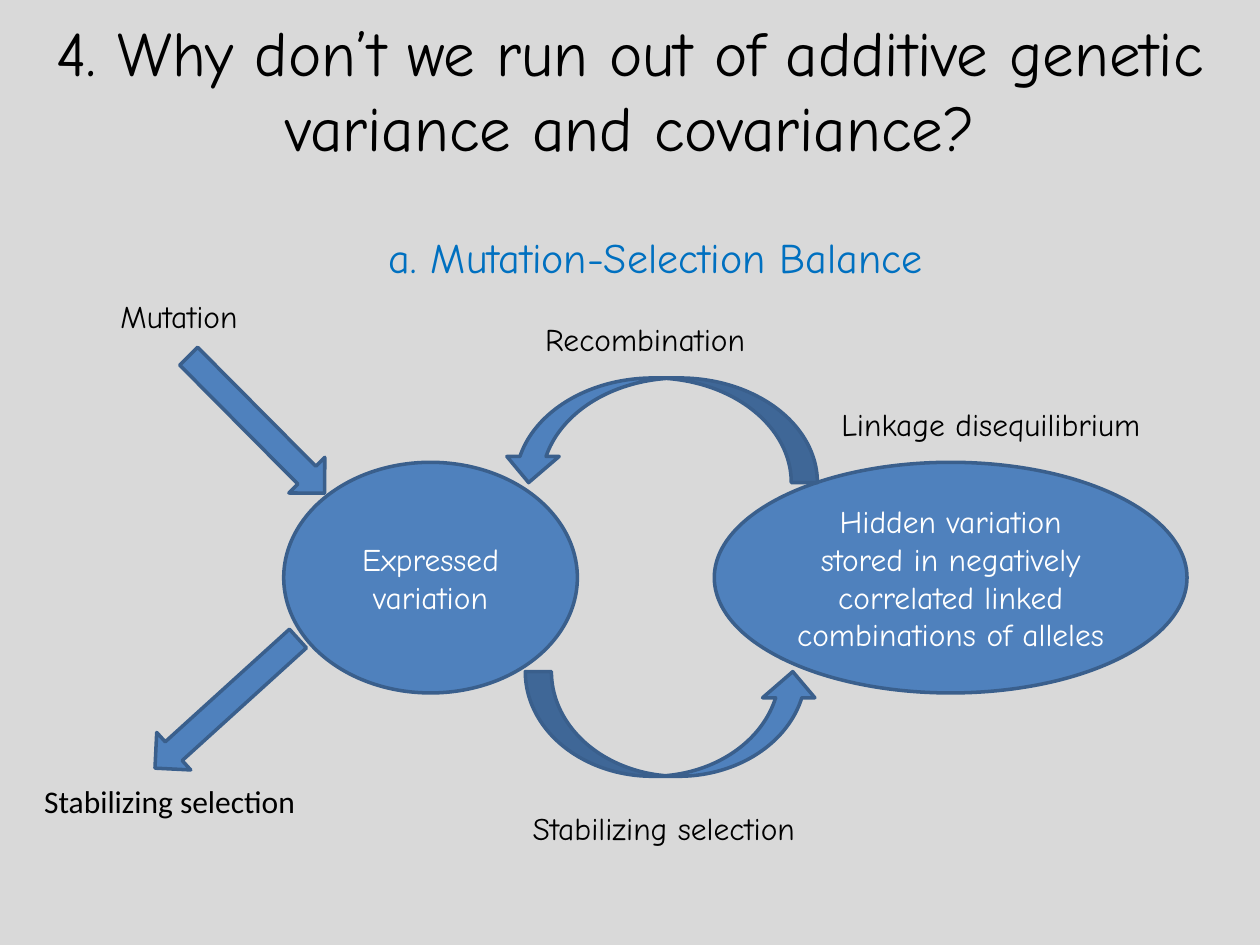
from dataclasses import dataclass

import pptx
import pptx.dml.color
import pptx.enum.shapes
import pptx.enum.text
import pptx.oxml.ns
import pptx.util

Cm = pptx.util.Cm
Preset = pptx.enum.shapes.MSO_SHAPE
Align = pptx.enum.text.PP_ALIGN
Anchor = pptx.enum.text.MSO_ANCHOR


@dataclass(frozen=True)
class Theme:
    background: str = "D9D9D9"
    ink: str = "000000"
    accent: str = "0070C0"
    fill: str = "4F81BD"
    outline: str = "3A5F8C"
    on_fill: str = "FFFFFF"
    font: str = "Comic Neue"
    plain_font: str = "Calibri"
    title_size: int = 36
    subtitle_size: int = 24
    body_size: int = 18
    outline_width: int = 2


THEME = Theme()
LABEL_HEIGHT = 1.02
POOL_TOP, POOL_HEIGHT = 9.32, 4.65
STRAIGHT_ARROW = (3.89, 1.02)


def rgb(code):
    return pptx.dml.color.RGBColor.from_string(code)


def write(frame, text, *, size=THEME.body_size, color=THEME.ink, font=THEME.font,
          align=Align.LEFT, anchor=Anchor.TOP, wrap=False):
    """Fill a text frame, one paragraph per line of text."""
    frame.word_wrap = wrap
    frame.vertical_anchor = anchor
    frame.text = text
    for paragraph in frame.paragraphs:
        paragraph.alignment = align
        for run in paragraph.runs:
            run.font.size = pptx.util.Pt(size)
            run.font.name = font
            run.font.color.rgb = rgb(color)


def add_label(slide, text, left, top, width, height=LABEL_HEIGHT, **text_format):
    box = slide.shapes.add_textbox(Cm(left), Cm(top), Cm(width), Cm(height))
    write(box.text_frame, text, **text_format)


def add_figure(slide, preset, left, top, width, height, rotation=0, mirrored=False):
    figure = slide.shapes.add_shape(preset, Cm(left), Cm(top), Cm(width), Cm(height))
    figure.shadow.inherit = False
    figure.fill.solid()
    figure.fill.fore_color.rgb = rgb(THEME.fill)
    figure.line.color.rgb = rgb(THEME.outline)
    figure.line.width = pptx.util.Pt(THEME.outline_width)
    figure.rotation = rotation
    if mirrored:
        figure._element.spPr.find(pptx.oxml.ns.qn("a:xfrm")).set("flipH", "1")
    return figure


def add_pool(slide, text, left, width):
    pool = add_figure(slide, Preset.OVAL, left, POOL_TOP, width, POOL_HEIGHT)
    write(pool.text_frame, text, color=THEME.on_fill, align=Align.CENTER,
          anchor=Anchor.MIDDLE, wrap=True)


def main():
    deck = pptx.Presentation()
    deck.slide_width, deck.slide_height = Cm(25.4), Cm(19.05)
    slide = deck.slides.add_slide(deck.slide_layouts[6])
    slide.background.fill.solid()
    slide.background.fill.fore_color.rgb = rgb(THEME.background)

    # Headings
    add_label(slide, "4. Why don’t we run out of additive genetic variance and covariance?",
              0, 0.2, 25.4, 3.18, size=THEME.title_size, align=Align.CENTER,
              anchor=Anchor.MIDDLE, wrap=True)
    add_label(slide, "a. Mutation-Selection Balance", 7.59, 4.55, 12.37, 1.27,
              size=THEME.subtitle_size, color=THEME.accent)

    # Pools of variation
    add_pool(slide, "Expressed variation", 5.72, 5.92)
    add_pool(slide, "Hidden variation stored in negatively\n"
                    "correlated linked combinations of alleles", 14.4, 9.53)

    # Exchange between the pools
    add_figure(slide, Preset.CURVED_UP_ARROW, 10.59, 13.54, 5.92, 2.11)
    add_figure(slide, Preset.CURVED_DOWN_ARROW, 10.13, 7.62, 6.35, 2.11, mirrored=True)

    # Mutation in, selection out
    add_figure(slide, Preset.RIGHT_ARROW, 3.23, 8.05, *STRAIGHT_ARROW, rotation=45.2)
    add_figure(slide, Preset.RIGHT_ARROW, 2.62, 13.67, *STRAIGHT_ARROW, rotation=137.8)

    # Process labels
    for text, left, top, width, font in (
        ("Recombination", 10.74, 6.32, 4.8, THEME.font),
        ("Stabilizing selection", 10.49, 16.18, 6.55, THEME.font),
        ("Mutation", 2.18, 5.87, 3.2, THEME.font),
        ("Stabilizing selection", 0.64, 15.65, 5.64, THEME.plain_font),
        ("Linkage disequilibrium", 16.71, 8.05, 7.06, THEME.font),
    ):
        add_label(slide, text, left, top, width, font=font)

    deck.save("out.pptx")


if __name__ == "__main__":
    main()
